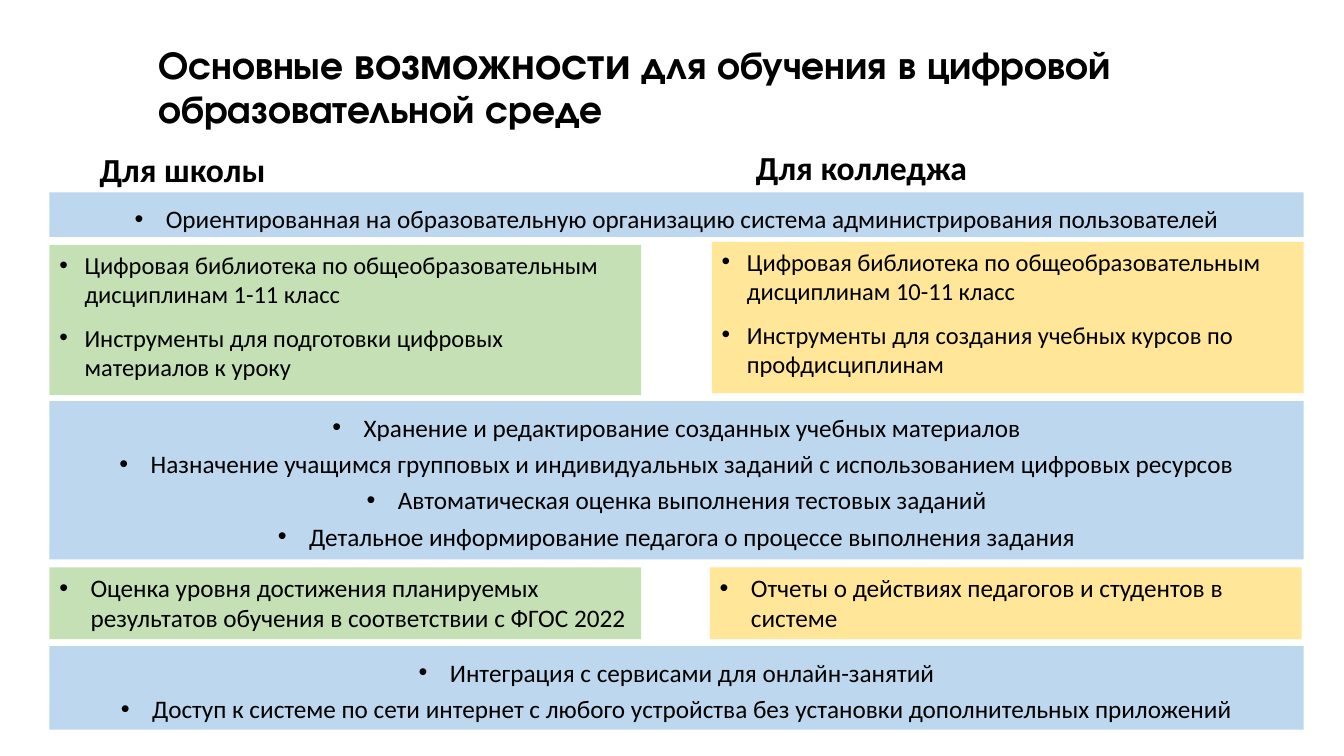
from dataclasses import dataclass

from lxml import etree
from pptx import Presentation
from pptx.dml.color import RGBColor
from pptx.enum.shapes import MSO_SHAPE
from pptx.enum.text import MSO_ANCHOR, MSO_AUTO_SIZE, PP_ALIGN
from pptx.oxml.ns import qn
from pptx.util import Inches, Pt

RECT = MSO_SHAPE.RECTANGLE
TOP, MIDDLE, BOTTOM = MSO_ANCHOR.TOP, MSO_ANCHOR.MIDDLE, MSO_ANCHOR.BOTTOM
LEFT, CENTER = PP_ALIGN.LEFT, PP_ALIGN.CENTER
NO_FIT = MSO_AUTO_SIZE.NONE


@dataclass(frozen=True)
class Theme:
    ink: RGBColor = RGBColor(0x00, 0x00, 0x00)
    blue: RGBColor = RGBColor(0xBD, 0xD7, 0xEE)
    green: RGBColor = RGBColor(0xC5, 0xE0, 0xB4)
    gold: RGBColor = RGBColor(0xFF, 0xE6, 0x99)
    head_font: str = "TeX Gyre Adventor"
    body_font: str = "Calibri"
    title: float = 28
    accent: float = 32
    head: float = 24
    body: float = 18
    list: float = 17.5


THEME = Theme()
EDGE, WIDE, HALF = 0.49, 12.44, 5.87


def style(run, size, name=THEME.body_font, bold=False):
    font = run.font
    font.size, font.name, font.bold = Pt(size), name, bold
    font.color.rgb = THEME.ink


def bullet(para, indent):
    props = para._p.get_or_add_pPr()
    props.set("marL", str(Inches(indent)))
    props.set("indent", str(-Inches(indent)))
    face = etree.SubElement(props, qn("a:buFont"))
    face.set("typeface", "Arial")
    etree.SubElement(props, qn("a:buChar")).set("char", "•")


def add_title(slide, box, parts):
    title = slide.shapes.title
    title.left, title.top, title.width, title.height = map(Inches, box)
    frame = title.text_frame
    frame.word_wrap, frame.auto_size = True, NO_FIT
    frame.vertical_anchor = MIDDLE
    para = frame.paragraphs[0]
    para.alignment, para.line_spacing = LEFT, 0.9
    for text, size in parts:
        run = para.add_run()
        run.text = text
        style(run, size, THEME.head_font, True)


def add_head(slide, box, text):
    frame = slide.shapes.add_textbox(*map(Inches, box)).text_frame
    frame.word_wrap, frame.vertical_anchor = True, BOTTOM
    frame.text = text
    para = frame.paragraphs[0]
    para.line_spacing = 0.9
    style(para.runs[0], THEME.head, bold=True)


def add_panel(slide, box, fill, items, size=THEME.body, indent=0.31,
              align=LEFT, lines=1.0, gap=0):
    panel = slide.shapes.add_shape(RECT, *map(Inches, box))
    panel.shadow.inherit = False
    panel.fill.solid()
    panel.fill.fore_color.rgb = fill
    panel.line.fill.background()
    frame = panel.text_frame
    frame.word_wrap, frame.vertical_anchor = True, TOP
    frame.text = "\n".join(items)
    for i, para in enumerate(frame.paragraphs):
        bullet(para, indent)
        para.alignment, para.line_spacing = align, lines
        para.space_before = Pt(gap if i else 0)
        style(para.runs[0], size)


def add_band(slide, top, height, items):
    add_panel(slide, (EDGE, top, WIDE, height), THEME.blue, items,
              align=CENTER, lines=1.2)


def add_list(slide, box, fill, items):
    add_panel(slide, box, fill, items, THEME.list, 0.25, gap=10)


def build(slide):
    # Title and column headings
    add_title(slide, (1.47, 0.13, 10.95, 1.45), [
        ("Основные ", THEME.title),
        ("возможности", THEME.accent),
        (" для обучения в цифровой образовательной среде", THEME.title),
    ])
    add_head(slide, (0.89, 1.03, 5.64, 0.9), "Для школы")
    add_head(slide, (7.4, 1.01, 5.67, 0.9), "Для колледжа")

    # Shared features, full width
    add_band(slide, 1.91, 0.44, [
        "Ориентированная на образовательную организацию система "
        "администрирования пользователей",
    ])
    add_band(slide, 3.98, 1.57, [
        "Хранение и редактирование созданных учебных материалов",
        "Назначение учащимся групповых и индивидуальных заданий "
        "с использованием цифровых ресурсов",
        "Автоматическая оценка выполнения тестовых заданий",
        "Детальное информирование педагога о процессе выполнения задания",
    ])
    add_band(slide, 6.41, 0.83, [
        "Интеграция с сервисами для онлайн-занятий",
        "Доступ к системе по сети интернет с любого устройства "
        "без установки дополнительных приложений",
    ])

    # School column
    add_list(slide, (EDGE, 2.43, HALF, 1.49), THEME.green, [
        "Цифровая библиотека по общеобразовательным дисциплинам 1-11 класс",
        "Инструменты для подготовки цифровых материалов к уроку",
    ])
    add_panel(slide, (EDGE, 5.63, HALF, 0.71), THEME.green, [
        "Оценка уровня достижения планируемых результатов обучения "
        "в соответствии с ФГОС 2022",
    ])

    # College column
    add_list(slide, (7.06, 2.4, HALF, 1.5), THEME.gold, [
        "Цифровая библиотека по общеобразовательным дисциплинам 10-11 класс",
        "Инструменты для создания учебных курсов по профдисциплинам",
    ])
    add_panel(slide, (7.04, 5.63, HALF, 0.71), THEME.gold, [
        "Отчеты о действиях педагогов и студентов в системе",
    ])


def main():
    deck = Presentation()
    deck.slide_width, deck.slide_height = Inches(13.33), Inches(7.5)
    build(deck.slides.add_slide(deck.slide_layouts[5]))
    deck.save("out.pptx")


if __name__ == "__main__":
    main()
